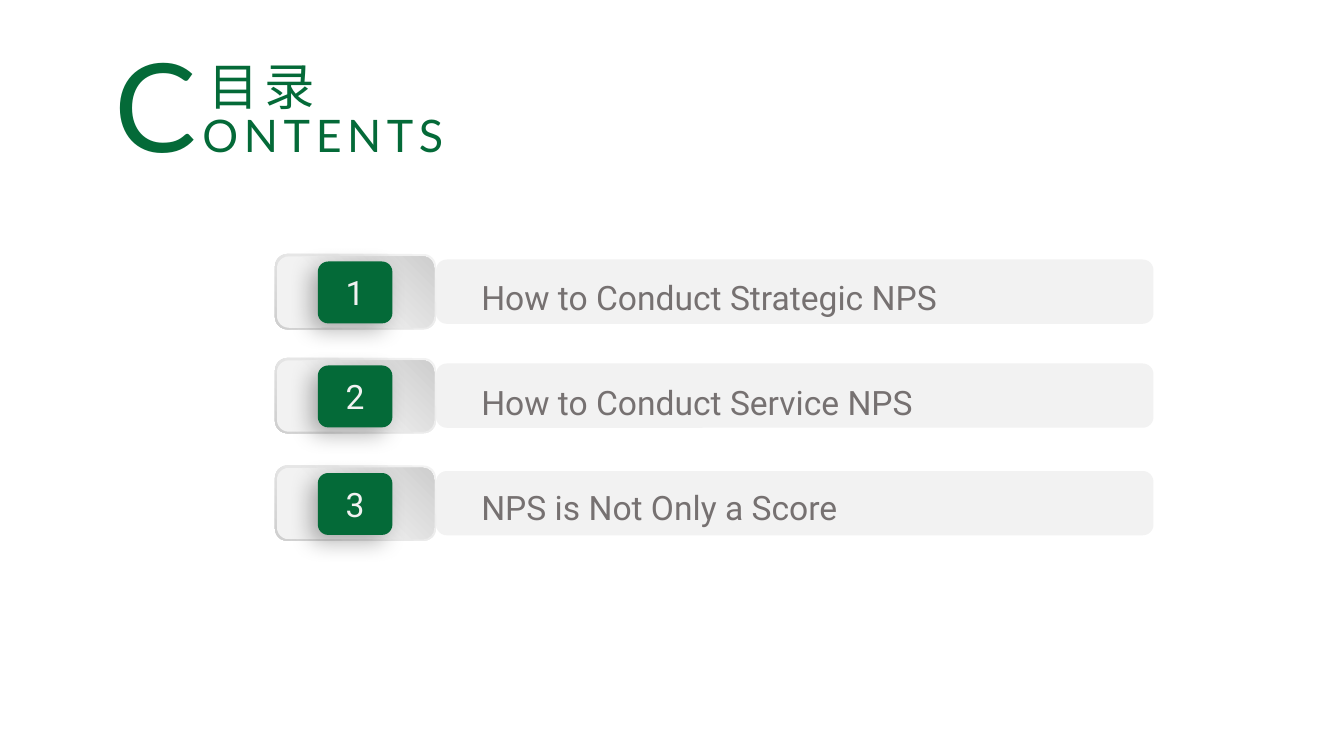
from dataclasses import dataclass

from pptx import Presentation
from pptx import util as u
from pptx.dml import color
from pptx.enum import shapes, text
from pptx.oxml import ns, parse_xml


@dataclass(frozen=True)
class Theme:
    green: str = "046A38"
    pale: str = "F2F2F2"
    grey: str = "767171"
    rim: tuple = ((0, "F2F2F2"), (62, "E6E6E6"), (100, "CECECE"))
    well: tuple = ((0, "F2F2F2"), (42, "F0F0F0"), (100, "CECECE"))
    huge: int = 88
    large: int = 36
    mid: int = 32
    base: int = 24
    title: str = "Lato"
    han: str = "Karla"
    body: str = "Roboto"


T = Theme()
ITEMS = (  # wording, top of row, top of label
    ("How to Conduct Strategic NPS", 6.4, 6.65),
    ("How to Conduct Service NPS", 9.02, 9.3),
    ("NPS is Not Only a Score", 11.73, 11.94),
)


def cm(*vals):
    return [u.Cm(v) for v in vals]


def write(shape, words, size, font, tint, align=text.PP_ALIGN.LEFT,
          anchor=text.MSO_ANCHOR.MIDDLE, gap=0, lead=None):
    """Add a run to the first paragraph of a shape."""
    frame = shape.text_frame
    frame.word_wrap = True
    frame.vertical_anchor = anchor
    para = frame.paragraphs[0]
    para.alignment = align
    if lead:
        para.line_spacing = lead
    run = para.add_run()
    run.text = words
    run.font.size = u.Pt(size)
    run.font.name = font
    run.font.color.rgb = color.RGBColor.from_string(tint)
    if gap:
        run.font._element.set("spc", str(gap * 100))


def plate(group, box, fill):
    """Add a rounded plate with a plain fill."""
    shape = group.shapes.add_shape(
        shapes.MSO_SHAPE.ROUNDED_RECTANGLE, *cm(*box))
    shape.shadow.inherit = False
    shape.line.fill.background()
    shape.fill.solid()
    shape.fill.fore_color.rgb = color.RGBColor.from_string(fill)
    return shape


def shade(shape, stops, angle):
    """Swap the plain fill for a linear gradient."""
    marks = "".join(
        f'<a:gs pos="{pos * 1000}"><a:srgbClr val="{tint}"/></a:gs>'
        for pos, tint in stops)
    grad = parse_xml(
        f'<a:gradFill {ns.nsdecls("a")} rotWithShape="1">'
        f'<a:gsLst>{marks}</a:gsLst>'
        f'<a:lin ang="{angle * 60000}" scaled="0"/></a:gradFill>')
    props = shape._element.spPr
    props.replace(props.find(ns.qn("a:solidFill")), grad)


def lift(shape):
    """Give a plate a soft shadow to the lower left."""
    glow = parse_xml(
        f'<a:outerShdw {ns.nsdecls("a")} blurRad="{u.Pt(16)}" '
        f'dist="{u.Pt(7)}" dir="{135 * 60000}" algn="tr" rotWithShape="0">'
        '<a:srgbClr val="000000"><a:alpha val="30000"/></a:srgbClr>'
        '</a:outerShdw>')
    shape._element.spPr.find(ns.qn("a:effectLst")).append(glow)


def header(slide, left, top):
    # Large initial and the rest of the word
    word = slide.shapes.add_textbox(*cm(left, top, 11.5, 2.2))
    write(word, "C", T.huge, T.title, T.green, gap=4)
    write(word, "ONTENTS", T.mid, T.title, T.green, gap=4)
    # Chinese title above it
    han = slide.shapes.add_textbox(*cm(left + 2.36, top, 4.3, 1.3))
    write(han, "目录", T.large, T.han, T.green, gap=4)


def entry(slide, left, top, num, words, base):
    group = slide.shapes.add_group_shape()
    # Bar and its label
    plate(group, (left + 4.06, top + 0.14, 18.08, 1.62), T.pale)
    label = group.shapes.add_textbox(*cm(left + 4.95, base, 17.65, 1.42))
    write(label, words, T.base, T.body, T.grey,
          anchor=text.MSO_ANCHOR.TOP, lead=1.2)
    # Switch: rim, well and numbered button
    shade(plate(group, (left, top, 4.06, 1.9), T.pale), T.rim, 135)
    shade(plate(group, (left + 0.05, top + 0.06, 3.96, 1.8), T.pale),
          T.well, 315)
    knob = plate(group, (left + 1.08, top + 0.19, 1.88, 1.56), T.green)
    lift(knob)
    write(knob, str(num), T.base, T.body, T.pale,
          align=text.PP_ALIGN.CENTER)


def main():
    deck = Presentation()
    deck.slide_width, deck.slide_height = cm(33.87, 19.05)
    slide = deck.slides.add_slide(deck.slide_layouts[6])
    header(slide, 2.64, 1.5)
    for num, (words, top, base) in enumerate(ITEMS, 1):
        entry(slide, 6.93, top, num, words, base)
    deck.save("out.pptx")


if __name__ == "__main__":
    main()
